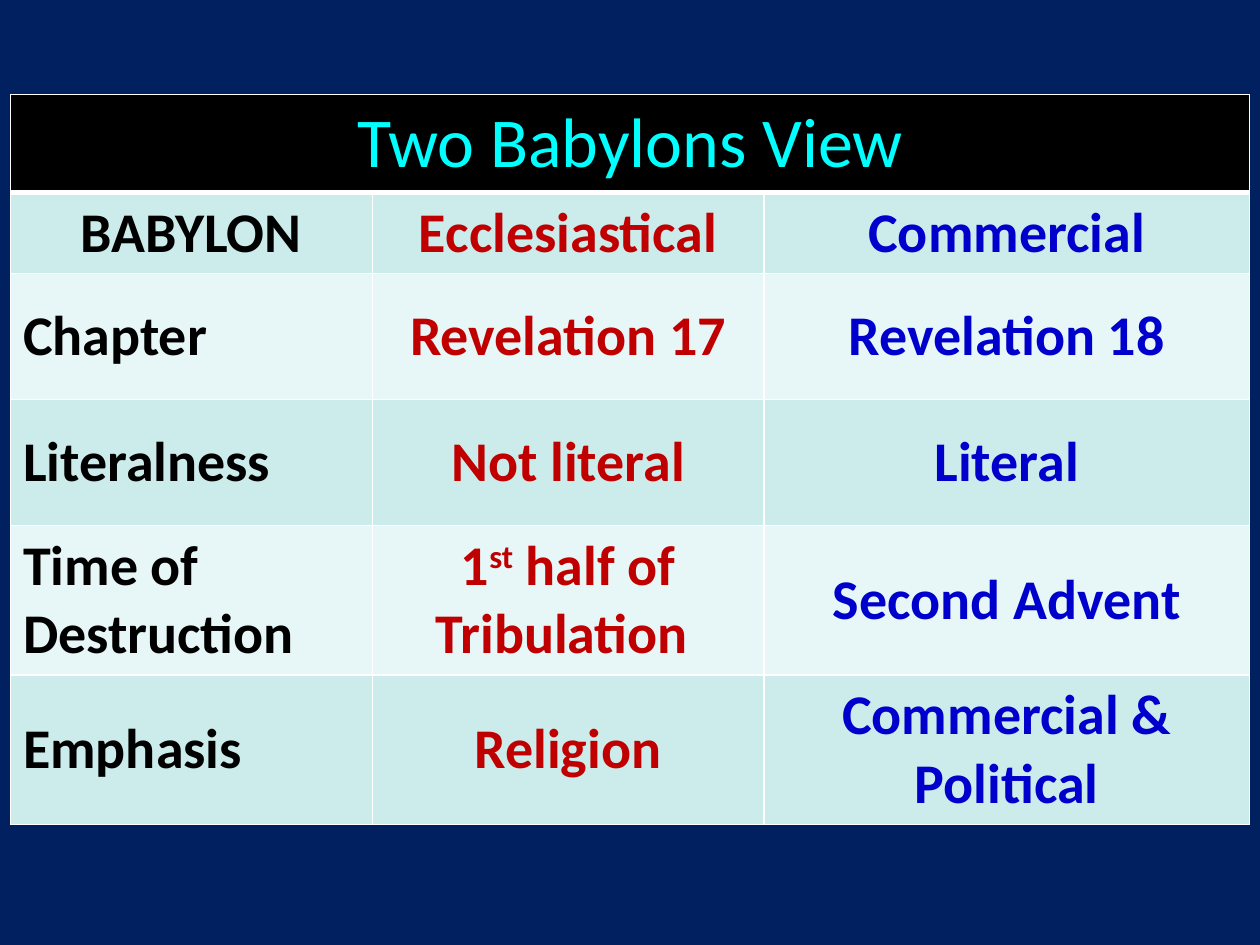
from lxml import etree
from pptx import Presentation
from pptx.dml.color import RGBColor
from pptx.enum.text import MSO_ANCHOR, PP_ALIGN
from pptx.oxml.ns import qn
from pptx.util import Pt

LEFT, CENTER = PP_ALIGN.LEFT, PP_ALIGN.CENTER
TOP, MIDDLE = MSO_ANCHOR.TOP, MSO_ANCHOR.MIDDLE

FONT = "Calibri"
NAVY, BLACK, WHITE, CYAN = "002060", "000000", "FFFFFF", "00FFFF"
BANDS = ("CCECEC", "E7F6F6")
COLUMN_COLORS = (BLACK, "C00000", "0000CC")
COLUMN_SHARES = (2.87, 3.11, 3.85)
ROW_HEIGHTS = (29.2, 29.2, 72, 72, 72, 72)

TITLE = "Two Babylons View"
# A cell is a string, or a list of (text, superscript) pairs
ROWS = (
    ("BABYLON", "Ecclesiastical", "Commercial"),
    ("Chapter", "Revelation 17", "Revelation 18"),
    ("Literalness", "Not literal", "Literal"),
    ("Time of Destruction",
     [("1", False), ("st", True), (" half of Tribulation ", False)],
     "Second Advent"),
    ("Emphasis", "Religion", "Commercial & Political"),
)


def rgb(value):
    return RGBColor.from_string(value)


def write_text(cell, text, size=32, color=BLACK, bold=True, align=CENTER, anchor=MIDDLE):
    cell.vertical_anchor = anchor
    paragraph = cell.text_frame.paragraphs[0]
    paragraph.alignment = align
    parts = [(text, False)] if isinstance(text, str) else text
    for part, superscript in parts:
        run = paragraph.add_run()
        run.text = part
        run.font.name = FONT
        run.font.size = Pt(size)
        run.font.bold = bold
        run.font.color.rgb = rgb(color)
        if superscript:
            run._r.get_or_add_rPr().set("baseline", "30000")


def style_cell(cell, fill, bottom=1, top=1):
    properties = cell._tc.get_or_add_tcPr()
    # Borders come before the fill in the cell properties
    for side, width in (("L", 1), ("R", 1), ("T", top), ("B", bottom)):
        line = etree.SubElement(properties, qn(f"a:ln{side}"), w=str(Pt(width)))
        solid = etree.SubElement(line, qn("a:solidFill"))
        etree.SubElement(solid, qn("a:srgbClr"), val=WHITE)
    cell.fill.solid()
    cell.fill.fore_color.rgb = rgb(fill)


def add_comparison_table(slide, left, top, width, height):
    frame = slide.shapes.add_table(
        len(ROW_HEIGHTS), len(COLUMN_SHARES), Pt(left), Pt(top), Pt(width), Pt(height))
    table = frame.table
    table.first_row = table.horz_banding = False
    for column, share in zip(table.columns, COLUMN_SHARES):
        column.width = Pt(width * share / sum(COLUMN_SHARES))
    for row, row_height in zip(table.rows, ROW_HEIGHTS):
        row.height = Pt(row_height)
    frame.height = Pt(height)

    # Title row across all columns
    title = table.cell(0, 0)
    title.merge(table.cell(0, len(COLUMN_SHARES) - 1))
    for cell in table.rows[0].cells:
        style_cell(cell, BLACK, bottom=3)
    write_text(title, TITLE, size=40, color=CYAN, bold=False, anchor=TOP)

    # Body rows in alternating bands
    for row_index, texts in enumerate(ROWS):
        for column_index, text in enumerate(texts):
            cell = table.cell(row_index + 1, column_index)
            style_cell(cell, BANDS[row_index % 2], top=1 if row_index else 3)
            is_label = row_index > 0 and column_index == 0
            write_text(cell, text, color=COLUMN_COLORS[column_index],
                       align=LEFT if is_label else CENTER)


def main():
    presentation = Presentation()
    presentation.slide_width, presentation.slide_height = Pt(720), Pt(540)
    slide = presentation.slides.add_slide(presentation.slide_layouts[6])
    slide.background.fill.solid()
    slide.background.fill.fore_color.rgb = rgb(NAVY)
    add_comparison_table(slide, 6, 54, 708, 412.5)
    presentation.save("out.pptx")


if __name__ == "__main__":
    main()
